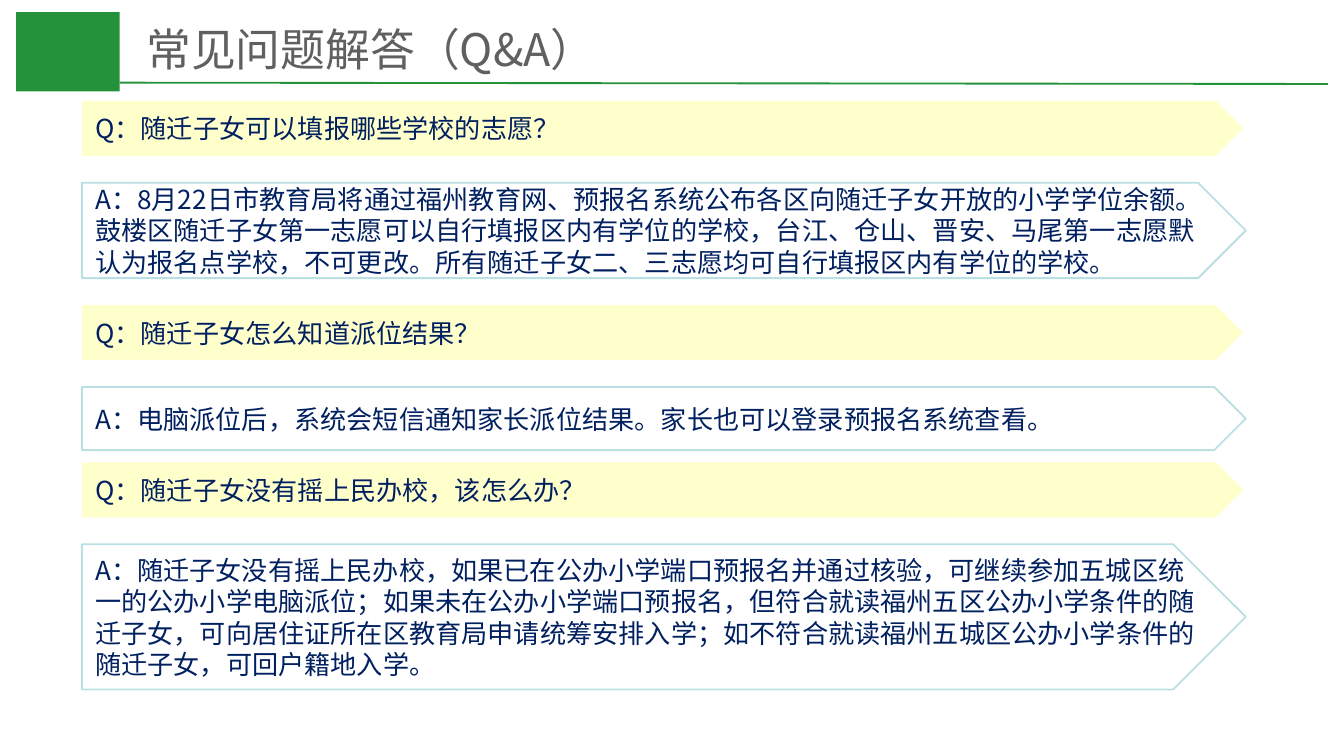
from lxml import etree
from pptx import Presentation
from pptx.dml.color import RGBColor
from pptx.enum.shapes import MSO_CONNECTOR, MSO_SHAPE
from pptx.enum.text import MSO_ANCHOR, PP_ALIGN
from pptx.oxml.ns import qn
from pptx.util import Pt

PX = 4572
RECT = MSO_SHAPE.RECTANGLE
PLATE = MSO_SHAPE.PENTAGON
LINE = MSO_CONNECTOR.STRAIGHT
MIDDLE = MSO_ANCHOR.MIDDLE
LEFT = PP_ALIGN.LEFT
FONT = "Noto Sans CJK SC"
COLORS = {
    "green": "24923B",
    "gray": "606060",
    "yellow": "FFFFCC",
    "aqua": "BBE0E3",
    "navy": "002060",
}


def color(name):
    return RGBColor.from_string(COLORS[name])


def write(shape, text, size, name):
    frame = shape.text_frame
    frame.word_wrap = True
    frame.vertical_anchor = MIDDLE
    frame.text = text
    para = frame.paragraphs[0]
    para.alignment = LEFT
    font = para.runs[0].font
    font.name = FONT
    font.size = Pt(size)
    font.color.rgb = color(name)
    east = etree.SubElement(para.runs[0]._r.get_or_add_rPr(), qn("a:ea"))
    east.set("typeface", FONT)


deck = Presentation()
deck.slide_width = 2000 * PX
deck.slide_height = 1125 * PX
slide = deck.slides.add_slide(deck.slide_layouts[6])
shapes = slide.shapes

block = shapes.add_shape(RECT, 24 * PX, 18 * PX, 154 * PX, 118 * PX)
block.shadow.inherit = False
block.fill.solid()
block.fill.fore_color.rgb = color("green")
block.line.fill.background()

rule = shapes.add_connector(LINE, 178 * PX, 123 * PX, 1976 * PX, 125 * PX)
rule.line.color.rgb = color("green")
rule.line.width = Pt(1)
etree.SubElement(rule._element.spPr, qn("a:effectLst"))

title = shapes.add_textbox(198 * PX, 38 * PX, 1700 * PX, 68 * PX)
write(title, "常见问题解答（Q&A）", 24, "gray")

pairs = [
    (150, 142, "Q：随迁子女可以填报哪些学校的志愿？",
     "A：8月22日市教育局将通过福州教育网、预报名系统公布各区向随迁子女开放的小学学位余额。"
     "鼓楼区随迁子女第一志愿可以自行填报区内有学位的学校，台江、仓山、晋安、马尾第一志愿默认为报名点学校，不可更改。"
     "所有随迁子女二、三志愿均可自行填报区内有学位的学校。"),
    (454, 94, "Q：随迁子女怎么知道派位结果？",
     "A：电脑派位后，系统会短信通知家长派位结果。家长也可以登录预报名系统查看。"),
    (688, 216, "Q：随迁子女没有摇上民办校，该怎么办？",
     "A：随迁子女没有摇上民办校，如果已在公办小学端口预报名并通过核验，可继续参加五城区统一的公办小学电脑派位；"
     "如果未在公办小学端口预报名，但符合就读福州五区公办小学条件的随迁子女，可向居住证所在区教育局申请统筹安排入学；"
     "如不符合就读福州五城区公办小学条件的随迁子女，可回户籍地入学。"),
]

for top, tall, ask, reply in pairs:
    query = shapes.add_shape(PLATE, 122 * PX, top * PX, 1728 * PX, 82 * PX)
    query.fill.solid()
    query.fill.fore_color.rgb = color("yellow")
    query.line.fill.background()
    answer = shapes.add_shape(PLATE, 122 * PX, (top + 122) * PX, 1732 * PX, tall * PX)
    answer.fill.background()
    answer.line.color.rgb = color("aqua")
    answer.line.width = Pt(1)
    for plate, text in ((query, ask), (answer, reply)):
        plate.shadow.inherit = False
        write(plate, text, 14, "navy")

deck.save("out.pptx")
